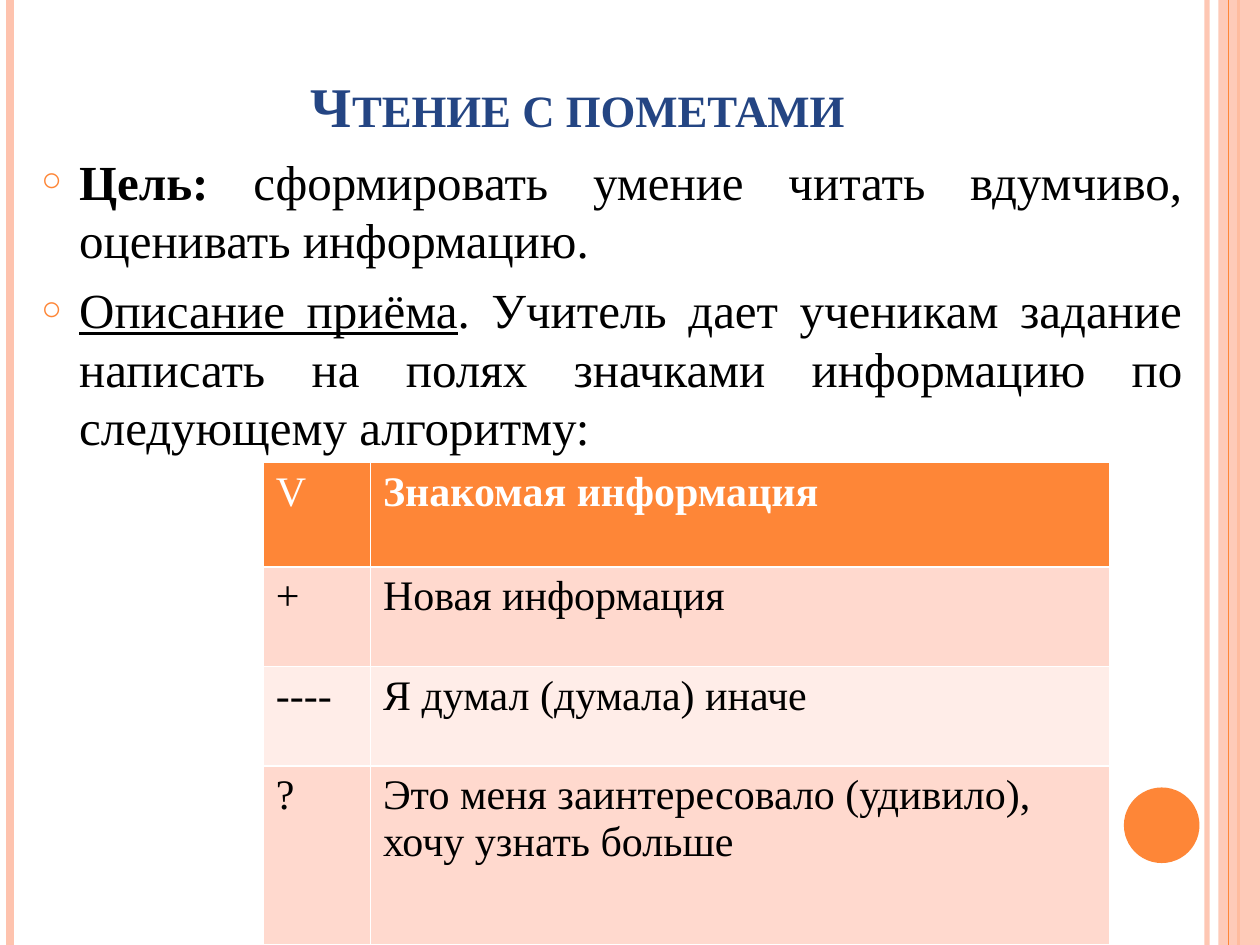
from lxml.etree import SubElement as Sub
from pptx import Presentation
from pptx.dml.color import RGBColor as Rgb
from pptx.enum.shapes import MSO_CONNECTOR as Link, MSO_SHAPE as Form
from pptx.enum.text import MSO_ANCHOR as Anchor, PP_ALIGN as Align
from pptx.oxml.ns import qn
from pptx.util import Inches, Pt

WIDE, HIGH = Inches(10), Inches(7.5)
COLS, ROWS = 100, 75
FONT = "Times New Roman"
HUES = {
    "accent": "FE8637", "peach": "FEC3AE", "title": "244583",
    "text": "000000", "white": "FFFFFF", "band": "FFD9CE", "pale": "FFEDE8",
}
MARKS = [
    ("V", "Знакомая информация"),
    ("+", "Новая информация"),
    ("----", "Я думал (думала) иначе"),
    ("?", "Это меня заинтересовало (удивило), хочу узнать больше"),
]


def col(n):
    return round(WIDE * n / COLS)


def row(n):
    return round(HIGH * n / ROWS)


def box(x, y, w, h):
    return col(x), row(y), col(w), row(h)


def hue(name):
    return Rgb.from_string(HUES[name])


def fade(part, share):
    """Set the opacity, in percent, of the solid colour inside part."""
    tint = next(part.iter(qn("a:srgbClr")))
    Sub(tint, qn("a:alpha"), val=str(share * 1000))


def add_rule(slide, x, name, width, share=100):
    """Draw a vertical line over the full height of the slide."""
    rule = slide.shapes.add_connector(Link.STRAIGHT, col(x), 0, col(x), HIGH)
    rule.line.color.rgb = hue(name)
    rule.line.width = Pt(width)
    props = rule._element.spPr
    if share < 100:
        fade(props, share)
    Sub(props, qn("a:effectLst"))


def add_form(slide, form, area, name, share=100):
    shape = slide.shapes.add_shape(form, *area)
    shape.shadow.inherit = False
    shape.fill.solid()
    shape.fill.fore_color.rgb = hue(name)
    shape.line.fill.background()
    if share < 100:
        fade(shape._element.spPr, share)


def add_run(para, text, size, name="text", bold=False, line=False):
    run = para.add_run()
    run.text = text
    font = run.font
    font.name, font.size = FONT, Pt(size)
    font.bold, font.underline = bold, line
    font.color.rgb = hue(name)
    return run


def add_frame(slide, area):
    frame = slide.shapes.add_textbox(*area).text_frame
    frame.word_wrap = True
    return frame


def add_title(slide, text):
    frame = add_frame(slide, box(5, 3, 81.7, 8.5))
    frame.vertical_anchor = Anchor.BOTTOM
    para = frame.paragraphs[0]
    para.alignment = Align.CENTER
    run = add_run(para, text, 32, "title", bold=True)
    run._r.get_or_add_rPr().set("cap", "small")


def set_bullet(para):
    props = para._p.get_or_add_pPr()
    props.set("marL", str(col(3)))
    props.set("indent", str(-col(3)))
    tint = Sub(props, qn("a:buClr"))
    Sub(tint, qn("a:srgbClr"), val=HUES["accent"])
    Sub(props, qn("a:buSzPct"), val="70000")
    Sub(props, qn("a:buFont"), typeface=FONT)
    Sub(props, qn("a:buChar"), char="○")


def add_body(slide, items):
    """Write bulleted paragraphs, each a styled lead and plain text."""
    frame = add_frame(slide, box(2.3, 11.5, 92.5, 55.6))
    for i, (lead, style, rest) in enumerate(items):
        para = frame.add_paragraph() if i else frame.paragraphs[0]
        para.alignment = Align.JUSTIFY
        para.space_before = Pt(6)
        set_bullet(para)
        add_run(para, lead, 28, **style)
        add_run(para, rest, 28)


def set_edges(cell):
    props = cell._tc.get_or_add_tcPr()
    for side in "LRTB":
        edge = Sub(props, qn(f"a:ln{side}"), w=str(Pt(1)))
        fill = Sub(edge, qn("a:solidFill"))
        Sub(fill, qn("a:srgbClr"), val=HUES["white"])


def add_marks(slide):
    area = box(20.9, 36.7, 67.2, 38.3)
    table = slide.shapes.add_table(len(MARKS), 2, *area).table
    table.first_row = table.horz_banding = False
    for part, size in zip(table.columns, (8.5, 58.7)):
        part.width = col(size)
    for part, size in zip(table.rows, (8.3, 7.9, 7.9, 14.2)):
        part.height = row(size)
    for r, texts in enumerate(MARKS):
        head = r == 0
        back = "accent" if head else ("band" if r % 2 else "pale")
        for c, text in enumerate(texts):
            cell = table.cell(r, c)
            set_edges(cell)
            cell.fill.solid()
            cell.fill.fore_color.rgb = hue(back)
            add_run(cell.text_frame.paragraphs[0], text, 24,
                    "white" if head else "text", bold=head and c == 1)


def add_decor(slide):
    add_rule(slide, 95.8, "peach", 3, 93)
    add_rule(slide, 0.8, "peach", 4.5)
    add_rule(slide, 98.3, "accent", 1.5)
    add_form(slide, Form.RECTANGLE, box(96.7, 0, 3.3, ROWS), "peach", 87)
    add_rule(slide, 97.5, "accent", 0.75)
    add_form(slide, Form.OVAL, box(89.2, 62.5, 6, 6), "accent")


def main():
    deck = Presentation()
    deck.slide_width, deck.slide_height = WIDE, HIGH
    slide = deck.slides.add_slide(deck.slide_layouts[6])
    add_decor(slide)
    add_title(slide, "Чтение с пометами")
    add_body(slide, [
        ("Цель:", {"bold": True},
         " сформировать умение читать вдумчиво, оценивать информацию."),
        ("Описание приёма", {"line": True},
         ". Учитель дает ученикам задание написать на полях значками "
         "информацию по следующему алгоритму:"),
    ])
    add_marks(slide)
    deck.save("out.pptx")


if __name__ == "__main__":
    main()
